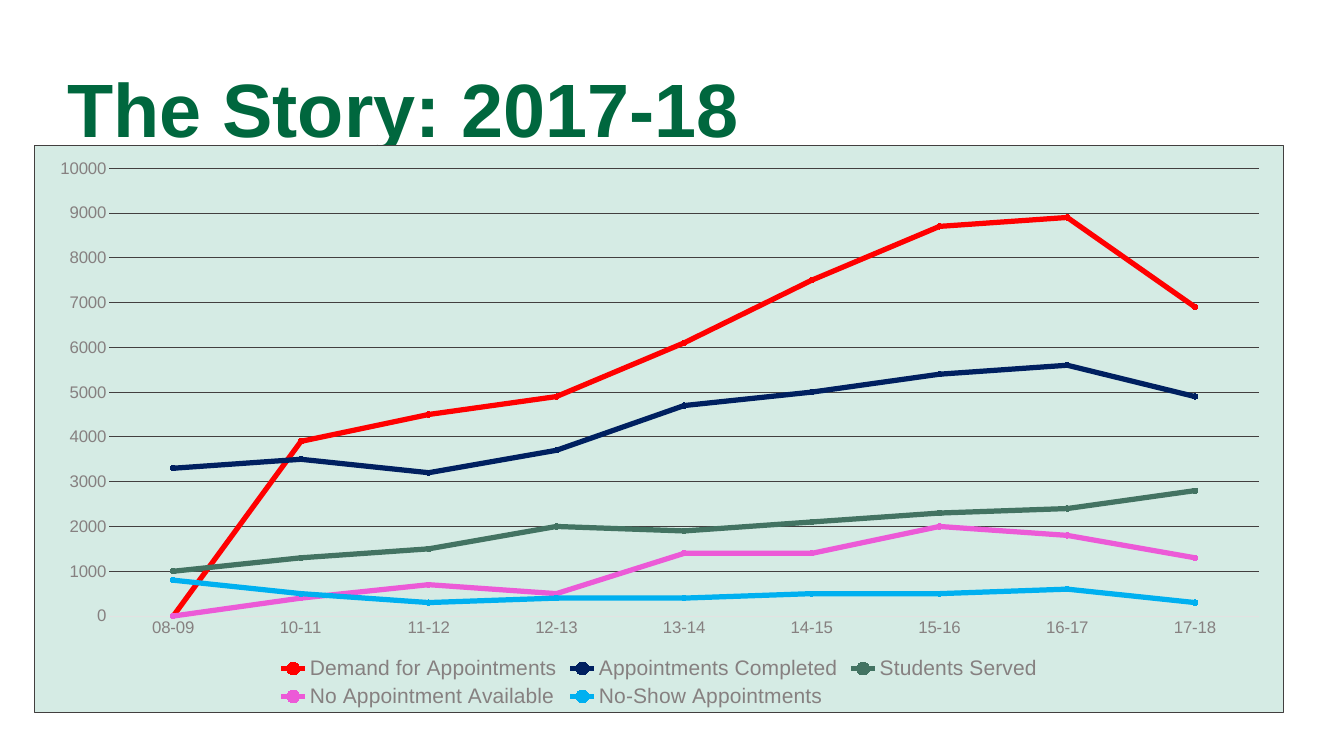
from dataclasses import dataclass

from lxml import etree
from pptx import Presentation
from pptx.chart.data import CategoryChartData
from pptx.dml.color import RGBColor
from pptx.enum import chart as ch, text
from pptx.oxml import parse_xml
from pptx.oxml.ns import nsdecls, qn
from pptx.util import Inches, Pt


@dataclass(frozen=True)
class Theme:
    font: str = "Arial"
    title: str = "00673E"
    label: str = "868080"
    rule: str = "423F3F"
    axis: str = "E3E2E2"
    panel: str = "D5EBE4"
    title_size: int = 72
    axis_size: int = 16
    legend_size: int = 20
    hairline: float = 0.75
    series_width: int = 5


YEARS = ["08-09", "10-11", "11-12", "12-13", "13-14",
         "14-15", "15-16", "16-17", "17-18"]
SERIES = [
    ("Demand for Appointments", "FF0000",
     [None, 3900, 4500, 4900, 6100, 7500, 8700, 8900, 6900]),
    ("Appointments Completed", "002060",
     [3300, 3500, 3200, 3700, 4700, 5000, 5400, 5600, 4900]),
    ("Students Served", "437362",
     [1000, 1300, 1500, 2000, 1900, 2100, 2300, 2400, 2800]),
    ("No Appointment Available", "EC5AD7",
     [None, 400, 700, 500, 1400, 1400, 2000, 1800, 1300]),
    ("No-Show Appointments", "00B0F0",
     [800, 500, 300, 400, 400, 500, 500, 600, 300]),
]


class Deck:
    def __init__(self, theme):
        self.theme = theme
        self.prs = Presentation()
        self.prs.slide_width, self.prs.slide_height = Inches(17.78), Inches(10)
        self.s = self.prs.slides.add_slide(self.prs.slide_layouts[5])

    def style_font(self, font, size, color, bold=False):
        font.name, font.size, font.bold = self.theme.font, Pt(size), bold
        font.color.rgb = RGBColor.from_string(color)

    def style_line(self, line, color, width):
        line.color.rgb = RGBColor.from_string(color)
        line.width = Pt(width)

    def title(self, words, left, top, width, height):
        sp = self.s.shapes.title
        sp.left, sp.top = Inches(left), Inches(top)
        sp.width, sp.height = Inches(width), Inches(height)
        tf = sp.text_frame
        tf.text = words
        tf.word_wrap = True
        tf.auto_size = text.MSO_AUTO_SIZE.NONE
        tf.vertical_anchor = text.MSO_ANCHOR.MIDDLE
        tf.margin_left = tf.margin_right = tf.margin_top = tf.margin_bottom = 0
        p = tf.paragraphs[0]
        p.alignment, p.line_spacing = text.PP_ALIGN.LEFT, 0.8
        self.style_font(p.runs[0].font, self.theme.title_size,
                        self.theme.title, bold=True)

    def line_chart(self, years, series, left, top, width, height):
        t = self.theme
        data = CategoryChartData(number_format="General")
        data.categories = years
        for name, _, values in series:
            data.add_series(name, values)
        chart = self.s.shapes.add_chart(
            ch.XL_CHART_TYPE.LINE_MARKERS, Inches(left), Inches(top),
            Inches(width), Inches(height), data).chart
        chart.has_title = False
        self.style_font(chart.font, 10, t.rule)
        chart.plots[0].vary_by_categories = False
        for line, (_, color, _) in zip(chart.plots[0].series, series):
            self.series(line, color)
        self.axes(chart)
        chart.has_legend = True
        chart.legend.position = ch.XL_LEGEND_POSITION.BOTTOM
        chart.legend.include_in_layout = False
        self.style_font(chart.legend.font, t.legend_size, t.label)
        self.chart_area(chart)
        self.plot_layout(chart, x=0.06, y=0.04, w=0.92, h=0.79)

    def series(self, line, color):
        line.smooth = False
        self.style_line(line.format.line, color, self.theme.series_width)
        marker = line.marker
        marker.style, marker.size = ch.XL_MARKER_STYLE.CIRCLE, 5
        marker.format.fill.solid()
        marker.format.fill.fore_color.rgb = RGBColor.from_string(color)
        self.style_line(marker.format.line, color, self.theme.hairline)

    def axes(self, chart):
        t = self.theme
        for axis in (chart.category_axis, chart.value_axis):
            axis.major_tick_mark = axis.minor_tick_mark = ch.XL_TICK_MARK.NONE
            self.style_font(axis.tick_labels.font, t.axis_size, t.label)
        self.style_line(chart.category_axis.format.line, t.axis, t.hairline)
        value = chart.value_axis
        value.minimum_scale, value.maximum_scale = 0, 10000
        value.major_unit = 1000
        value.format.line.fill.background()
        value.has_major_gridlines = True
        self.style_line(value.major_gridlines.format.line, t.rule, t.hairline)

    def chart_area(self, chart):
        """Fill and frame the chart, and plot missing values as zero."""
        t = self.theme
        root = chart.element
        root.find(qn("c:chart")).addnext(parse_xml(
            f'<c:spPr {nsdecls("c", "a")}>'
            f'<a:solidFill><a:srgbClr val="{t.panel}"/></a:solidFill>'
            f'<a:ln w="{Pt(t.hairline)}"><a:solidFill>'
            f'<a:srgbClr val="{t.rule}"/></a:solidFill></a:ln></c:spPr>'))
        for blanks in root.iter(qn("c:dispBlanksAs")):
            blanks.set("val", "zero")

    def plot_layout(self, chart, **box):
        """Place the inner plot area by fractions of the chart."""
        plot = chart.element.find(".//" + qn("c:plotArea"))
        for old in plot.findall(qn("c:layout")):
            plot.remove(old)
        layout = etree.Element(qn("c:layout"))
        manual = etree.SubElement(layout, qn("c:manualLayout"))
        settings = {"layoutTarget": "inner", "xMode": "edge",
                    "yMode": "edge", **box}
        for tag, val in settings.items():
            etree.SubElement(manual, qn("c:" + tag)).set("val", str(val))
        plot.insert(0, layout)


def main():
    deck = Deck(Theme())
    deck.title("The Story: 2017-18", 0.89, 0.73, 16, 1.6)
    deck.line_chart(YEARS, SERIES, 0.45, 1.92, 16.54, 7.51)
    deck.prs.save("out.pptx")


if __name__ == "__main__":
    main()
